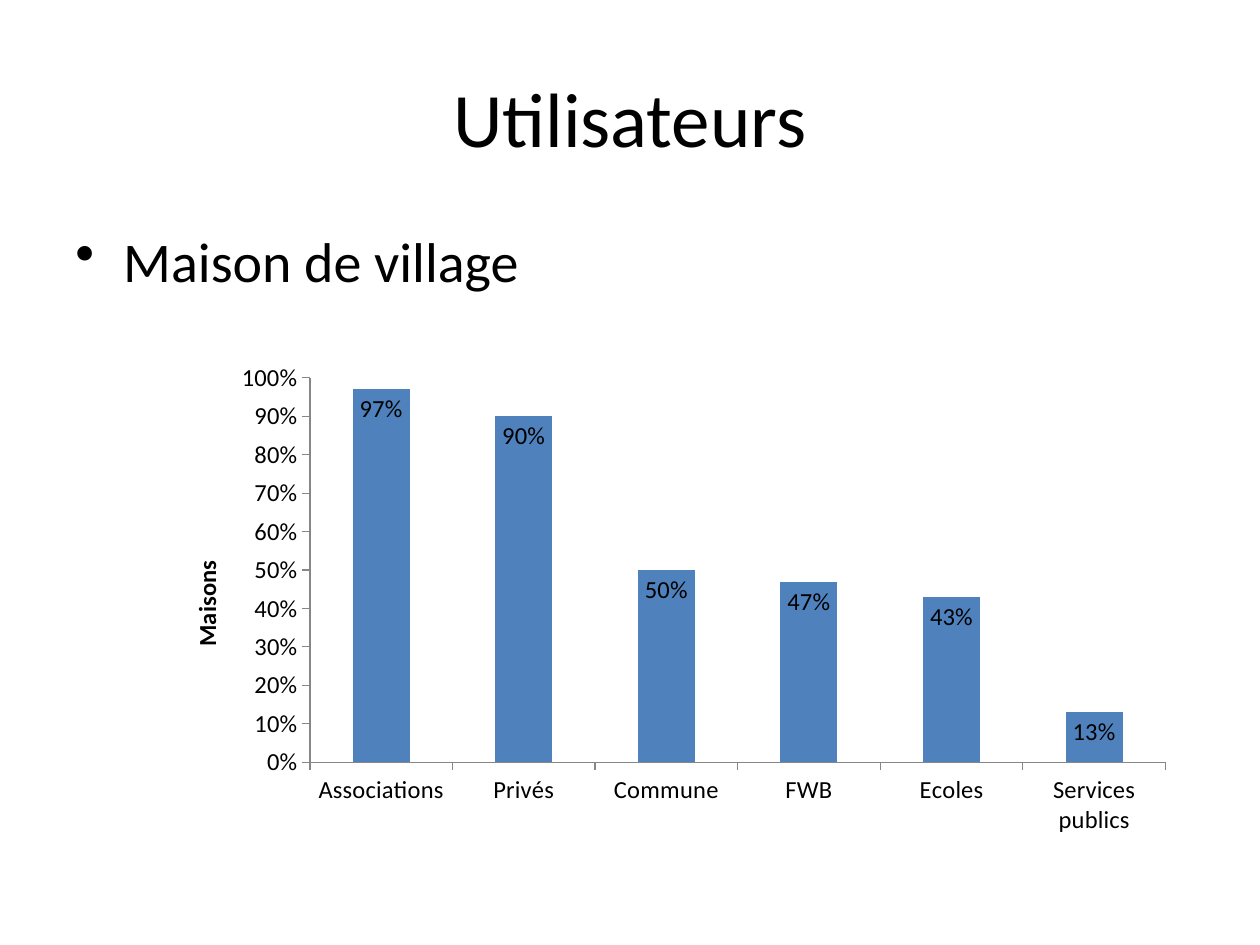
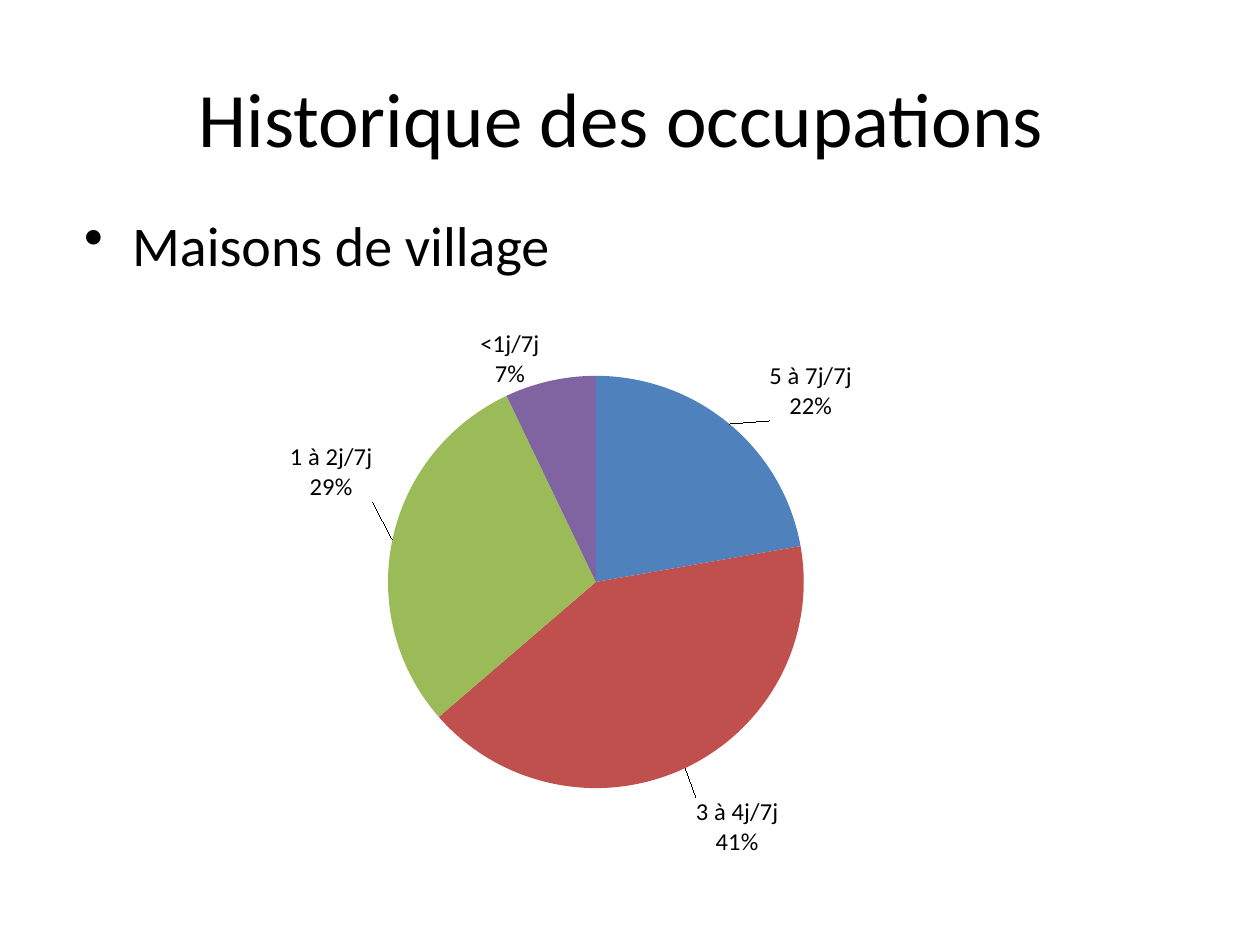
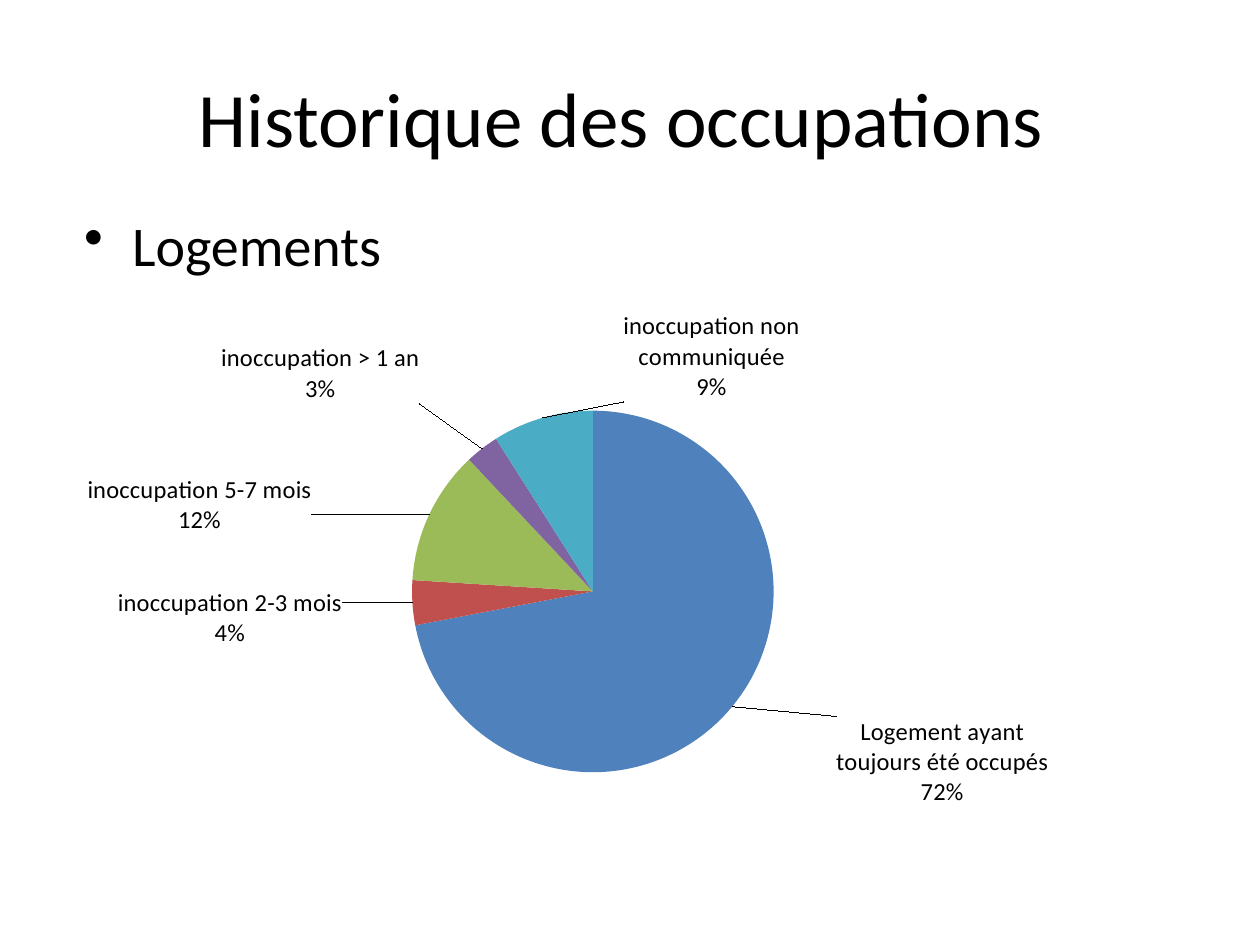
from lxml.etree import SubElement
from pptx import Presentation
from pptx.chart.data import CategoryChartData
from pptx.dml.color import RGBColor
from pptx.enum.chart import XL_CHART_TYPE, XL_LABEL_POSITION, XL_TICK_MARK
from pptx.enum.text import MSO_ANCHOR, PP_ALIGN
from pptx.oxml.ns import qn
from pptx.util import Inches, Pt

FONT = "Calibri"
COLORS = {"text": "000000", "axis": "868686", "blue": "4F81BD", "red": "C0504D",
          "green": "9BBB59", "purple": "8064A2", "aqua": "4BACC6"}
SLICES = ["blue", "red", "green", "purple", "aqua"]

# Plot boxes and label shifts are in inches within the chart
SLIDES = [
    {"title": "Utilisateurs", "bullet": "Maison de village",
     "body": (0.5, 1.75, 9, 0.82), "kind": XL_CHART_TYPE.COLUMN_CLUSTERED,
     "chart": (1.22, 2.81, 8.19, 3.9), "plot": (1.24, 0.19, 6.79, 3.05),
     "data": {"Associations": 0.97, "Privés": 0.9, "Commune": 0.5, "FWB": 0.47,
              "Ecoles": 0.43, "Services publics": 0.13}},
    {"title": "Historique des occupations ", "bullet": "Maisons de village",
     "body": (0.57, 1.62, 9, 4.95), "kind": XL_CHART_TYPE.PIE,
     "chart": (1.61, 2.49, 7.72, 4.44), "plot": (1.47, 0.46, 3.3, 3.3),
     "data": {"5 à 7j/7j": 22, "3 à 4j/7j": 41, "1 à 2j/7j": 29, "<1j/7j": 7},
     "shifts": [(0.28, 0.02), (0.06, 0.18), (-0.1, -0.29), (-0.07, 0.12)]},
    {"title": "Historique des occupations ", "bullet": "Logements",
     "body": (0.57, 1.62, 9, 4.95), "kind": XL_CHART_TYPE.PIE,
     "chart": (0, 2.33, 9.8, 4.49), "plot": (3.27, 0.93, 2.87, 2.87),
     "data": {"Logement ayant toujours été occupés": 72, "inoccupation 2-3 mois": 4,
              "inoccupation 5-7 mois": 12, "inoccupation > 1 an": 3,
              "inoccupation non communiquée": 9},
     "shifts": [(0.78, 0.04), (-0.5, 0.12), (-0.88, 0.19), (-0.46, -0.31), (2.06, -0.07)]},
]


def add_text(s, box, text, size):
    tf = s.shapes.add_textbox(*map(Inches, box)).text_frame
    tf.word_wrap = True
    tf.text = text
    p = tf.paragraphs[0]
    font = p.runs[0].font
    font.name, font.size = FONT, Pt(size)
    font.color.rgb = RGBColor.from_string(COLORS["text"])
    return tf, p


def set_layout(parent, index, box, size, modes):
    """Place a chart part by hand; box and chart size are in inches."""
    for old in parent.findall(qn("c:layout")):
        parent.remove(old)
    layout = SubElement(parent, qn("c:layout"))
    parent.insert(index, layout)
    manual = SubElement(layout, qn("c:manualLayout"))
    for tag, val in modes.items():
        SubElement(manual, qn(f"c:{tag}")).set("val", val)
    for tag, length, whole in zip("xywh", box, size * 2):
        SubElement(manual, qn(f"c:{tag}")).set("val", f"{length / whole:.4f}")


prs = Presentation()
prs.slide_width, prs.slide_height = Inches(10), Inches(7.5)
edges = {"xMode": "edge", "yMode": "edge"}

for item in SLIDES:
    s = prs.slides.add_slide(prs.slide_layouts[6])
    tf, p = add_text(s, (0.5, 0.3, 9, 1.25), item["title"], 44)
    tf.vertical_anchor = MSO_ANCHOR.MIDDLE
    p.alignment = PP_ALIGN.CENTER

    tf, p = add_text(s, item["body"], item["bullet"], 32)
    pPr = p._p.get_or_add_pPr()
    pPr.set("marL", str(Inches(0.38)))
    pPr.set("indent", str(-Inches(0.38)))
    SubElement(pPr, qn("a:buChar")).set("char", "•")

    is_pie = item["kind"] == XL_CHART_TYPE.PIE
    data = CategoryChartData(number_format="General" if is_pie else "0%")
    data.categories = list(item["data"])
    data.add_series("Series 1", list(item["data"].values()))
    chart = s.shapes.add_chart(item["kind"], *map(Inches, item["chart"]), data).chart
    chart.has_legend = chart.has_title = False
    chart.font.name, chart.font.size = FONT, Pt(14)
    chart.font.color.rgb = RGBColor.from_string(COLORS["text"])
    size = item["chart"][2:]
    plot_area = chart._chartSpace.chart.plotArea
    set_layout(plot_area, 0, item["plot"], size, {"layoutTarget": "inner", **edges})

    plot = chart.plots[0]
    plot.vary_by_categories = is_pie
    series = plot.series[0]
    labels = series.data_labels
    if is_pie:
        labels.show_value = False
        labels.show_category_name = labels.show_percentage = True
        labels.position = XL_LABEL_POSITION.OUTSIDE_END
        for i, shift in enumerate(item["shifts"]):
            point = series.points[i]
            point.format.fill.solid()
            point.format.fill.fore_color.rgb = RGBColor.from_string(COLORS[SLICES[i]])
            point.data_label.position = XL_LABEL_POSITION.OUTSIDE_END
            dLbl = labels._element.findall(qn("c:dLbl"))[i]
            for tag, val in (("showVal", "0"), ("showCatName", "1"), ("showPercent", "1")):
                dLbl.find(qn(f"c:{tag}")).set("val", val)
            set_layout(dLbl, 1, shift, size, {})
    else:
        plot.gap_width = 150
        series.format.fill.solid()
        series.format.fill.fore_color.rgb = RGBColor.from_string(COLORS["blue"])
        labels.show_value = True
        labels.number_format, labels.number_format_is_linked = "0%", False
        labels.position = XL_LABEL_POSITION.INSIDE_END
        for axis in (chart.category_axis, chart.value_axis):
            axis.has_major_gridlines = False
            axis.major_tick_mark = XL_TICK_MARK.OUTSIDE
            axis.minor_tick_mark = XL_TICK_MARK.NONE
            axis.format.line.color.rgb = RGBColor.from_string(COLORS["axis"])
        axis = chart.value_axis
        axis.minimum_scale, axis.maximum_scale, axis.major_unit = 0, 1, 0.1
        axis.tick_labels.number_format = "0%"
        axis.tick_labels.number_format_is_linked = False
        tf = axis.axis_title.text_frame
        tf.text = "Maisons"
        tf._txBody.bodyPr.set("rot", "-5400000")
        tf._txBody.bodyPr.set("vert", "horz")
        font = tf.paragraphs[0].runs[0].font
        font.name, font.size, font.bold = FONT, Pt(14), True
        font.color.rgb = RGBColor.from_string(COLORS["text"])
        set_layout(axis.axis_title._element, 1, (0.25, 1.6), size, edges)

prs.save("out.pptx")
